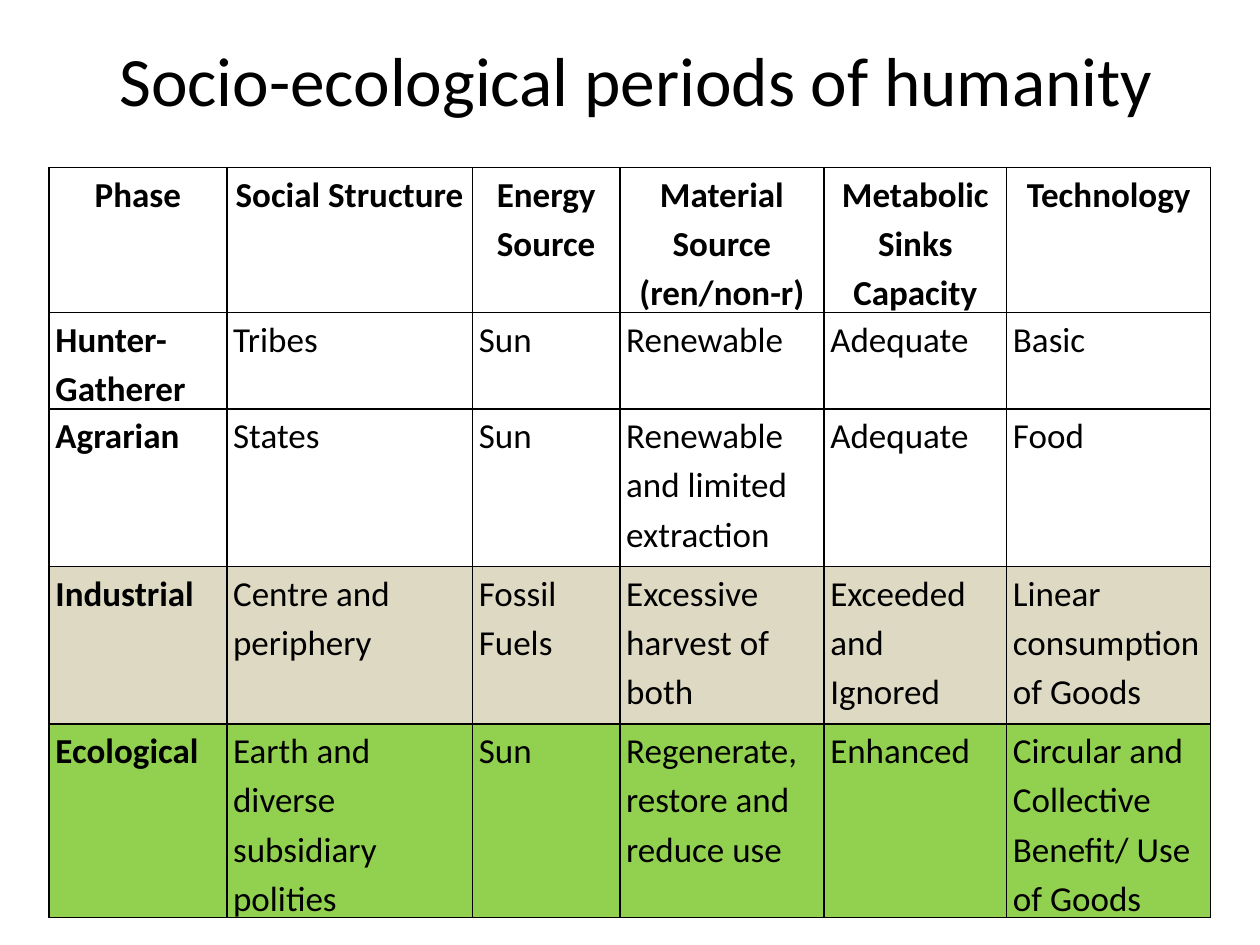
"""Build a slide with a table of the socio-ecological periods of humanity."""
import pptx
import pptx.dml.color
import pptx.enum.text
import pptx.oxml
import pptx.oxml.ns
import pptx.util

WIDTH, HEIGHT = 10, 7.5
FONT = "Calibri"
BLACK, WHITE, SAND, GREEN = "000000", "FFFFFF", "DDD9C3", "92D050"
COLUMN_WIDTHS = [1.41, 1.95, 1.17, 1.62, 1.45, 1.62]
ROW_HEIGHTS = [0.83, 0.42, 1.25, 1.25, 1.25]
ROW_FILLS = [WHITE, WHITE, WHITE, SAND, GREEN]
PERIODS = [
    ["Phase", "Social Structure", "Energy Source", "Material Source (ren/non-r)",
     "Metabolic Sinks Capacity", "Technology"],
    ["Hunter-Gatherer", "Tribes", "Sun", "Renewable", "Adequate", "Basic"],
    ["Agrarian", "States", "Sun", "Renewable and limited extraction", "Adequate", "Food"],
    ["Industrial", "Centre and periphery", "Fossil Fuels", "Excessive harvest of both",
     "Exceeded and Ignored", "Linear consumption of Goods"],
    ["Ecological", "Earth and diverse subsidiary polities", "Sun",
     "Regenerate, restore and reduce use", "Enhanced",
     "Circular and Collective Benefit/ Use of Goods"],
]


def color(value):
    """Turn a hex string into a colour."""
    return pptx.dml.color.RGBColor.from_string(value)


def place(left, top, width, height):
    """Turn shares of the slide's size into a position and a size."""
    shares = [left * WIDTH, top * HEIGHT, width * WIDTH, height * HEIGHT]
    return [pptx.util.Inches(share) for share in shares]


def write(frame, text, size, bold=False, centered=False):
    """Write one paragraph into a text frame."""
    align = pptx.enum.text.PP_ALIGN
    frame.word_wrap = True
    para = frame.paragraphs[0]
    para.text = text
    para.alignment = align.CENTER if centered else align.LEFT
    para.font.name = FONT
    para.font.size = pptx.util.Pt(size)
    para.font.bold = bold
    para.font.color.rgb = color(BLACK)
    return para


def add_title(page, text):
    """Add the centred title at the top of the slide."""
    box = page.shapes.add_textbox(*place(0.055, 0, 0.9, 1 / 6))
    box.text_frame.vertical_anchor = pptx.enum.text.MSO_ANCHOR.MIDDLE
    write(box.text_frame, text, 39.6, centered=True)


def add_borders(cell):
    """Draw a thin line on all four sides of a cell."""
    properties = cell._tc.get_or_add_tcPr()
    for index, side in enumerate(["lnL", "lnR", "lnT", "lnB"]):
        line = pptx.oxml.parse_xml(
            f'<a:{side} {pptx.oxml.ns.nsdecls("a")} w="{pptx.util.Pt(1)}"><a:solidFill>'
            f'<a:srgbClr val="{BLACK}"/></a:solidFill></a:{side}>')
        properties.insert(index, line)


def fill_cell(cell, text, fill, bold, centered):
    """Give a cell its text, margins, fill and borders."""
    cell.margin_left = cell.margin_right = pptx.util.Inches(0.05)
    cell.margin_top = cell.margin_bottom = 0
    para = write(cell.text_frame, text, 20, bold, centered)
    para.line_spacing = 1.15
    cell.fill.solid()
    cell.fill.fore_color.rgb = color(fill)
    add_borders(cell)


def add_periods(page):
    """Add the table with a bold header row and a bold first column."""
    bounds = place(0.039, 0.177, 0.922, 0.793)
    frame = page.shapes.add_table(len(ROW_HEIGHTS), len(COLUMN_WIDTHS), *bounds)
    table = frame.table
    table.first_row = table.horz_banding = False
    for column, width in zip(table.columns, COLUMN_WIDTHS):
        column.width = pptx.util.Inches(width)
    for row, height in zip(table.rows, ROW_HEIGHTS):
        row.height = pptx.util.Inches(height)
    frame.height = bounds[3]
    for row, texts in enumerate(PERIODS):
        for column, text in enumerate(texts):
            header = row == 0
            fill_cell(table.cell(row, column), text, ROW_FILLS[row],
                      header or column == 0, header)


def main():
    """Build and save the deck."""
    deck = pptx.Presentation()
    deck.slide_width = pptx.util.Inches(WIDTH)
    deck.slide_height = pptx.util.Inches(HEIGHT)
    page = deck.slides.add_slide(deck.slide_layouts[6])
    add_title(page, "Socio-ecological periods of humanity")
    add_periods(page)
    deck.save("out.pptx")


if __name__ == "__main__":
    main()
